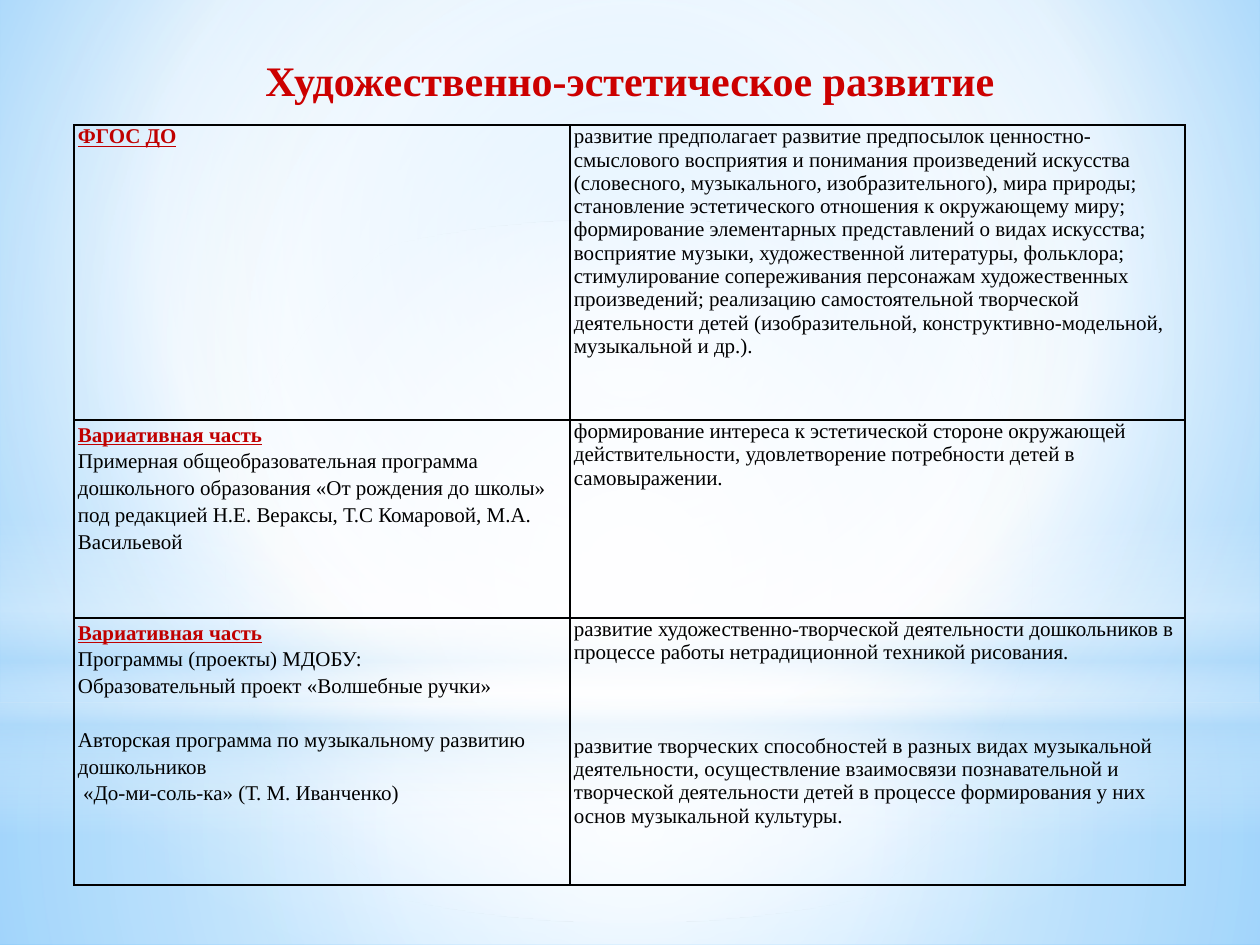
from lxml.etree import SubElement
from pptx import Presentation
from pptx.dml.color import RGBColor
from pptx.enum.shapes import MSO_SHAPE
from pptx.enum.text import MSO_ANCHOR, PP_ALIGN
from pptx.oxml import parse_xml
from pptx.oxml.ns import nsdecls, qn
from pptx.util import Pt

PX = 914400 // 126
FONT = "Times New Roman"
COLORS = {"title": "CC0000", "heading": "C00000", "text": "000000", "border": "000000",
          "white": "FFFFFF", "haze": "B4DCFA", "sky": "9ED5FF", "blue": "5BB9FF"}

TITLE = "Художественно-эстетическое развитие"
TITLE_BOX = (74, 45, 1112, 70)

# Gradient stops: position %, colour, opacity %
BACKGROUND = [(0, "sky", 100), (60, "white", 100), (100, "blue", 100)]
BACKGROUND_FOCUS = (20, 10, 20, 60)
CENTRE = (50, 50, 50, 50)
# Shape, box, stops, focus (None for a vertical linear gradient)
HAZE = [
    (MSO_SHAPE.RECTANGLE, (0, 703, 1260, 242),
     [(0, "white", 91), (37, "white", 76), (100, "haze", 79)], CENTRE),
    (MSO_SHAPE.RECTANGLE, (0, 0, 1260, 703),
     [(0, "white", 89), (48, "white", 62), (100, "haze", 79)], CENTRE),
    (MSO_SHAPE.RECTANGLE, (0, 519, 1260, 315),
     [(0, "white", 0), (29, "white", 30), (45, "haze", 40),
      (55, "white", 26), (65, "haze", 60), (100, "white", 0)], None),
    (MSO_SHAPE.OVAL, (0, 220, 1260, 703),
     [(0, "white", 100), (56, "white", 0)], CENTRE),
]

TABLE_LEFT, TABLE_TOP = 74, 125
COLUMN_WIDTHS = [496, 615]
ROW_HEIGHTS = [295, 198, 267]
CELL_MARGIN = 4
# Each row: heading, left paragraphs, right paragraphs; a paragraph is (text, points before)
ROWS = [
    ("ФГОС ДО", [],
     [("развитие предполагает развитие предпосылок ценностно-смыслового восприятия и понимания "
       "произведений искусства (словесного, музыкального, изобразительного), мира природы; "
       "становление эстетического отношения к окружающему миру; формирование элементарных "
       "представлений о видах искусства; восприятие музыки, художественной литературы, фольклора; "
       "стимулирование сопереживания персонажам художественных произведений; реализацию "
       "самостоятельной творческой деятельности детей (изобразительной, "
       "конструктивно-модельной, музыкальной и др.).", 0)]),
    ("Вариативная часть",
     [("Примерная общеобразовательная программа дошкольного образования «От рождения до школы» "
       "под редакцией Н.Е. Вераксы, Т.С Комаровой, М.А. Васильевой", 0)],
     [("формирование интереса к эстетической стороне окружающей действительности, "
       "удовлетворение потребности детей в самовыражении.", 0)]),
    ("Вариативная часть",
     [("Программы (проекты) МДОБУ:", 0),
      ("Образовательный проект «Волшебные ручки»", 0),
      ("Авторская программа по музыкальному развитию дошкольников", 15.3),
      (" «До-ми-соль-ка» (Т. М. Иванченко)", 0)],
     [("развитие художественно-творческой деятельности дошкольников в процессе работы "
       "нетрадиционной техникой рисования.", 0),
      ("развитие творческих способностей в разных видах музыкальной деятельности, осуществление "
       "взаимосвязи познавательной и творческой деятельности детей в процессе формирования у них "
       "основ музыкальной культуры.", 40)]),
]


def scaled(lengths):
    return [length * PX for length in lengths]


def gradient(stops, focus):
    stop_xml = "".join(
        f'<a:gs pos="{position * 1000}"><a:srgbClr val="{COLORS[color]}">'
        f'<a:alpha val="{opacity * 1000}"/></a:srgbClr></a:gs>'
        for position, color, opacity in stops)
    if focus:
        sides = " ".join(f'{side}="{value * 1000}"' for side, value in zip("ltrb", focus))
        shade = f'<a:path path="circle"><a:fillToRect {sides}/></a:path>'
    else:
        shade = '<a:lin ang="5400000" scaled="0"/>'
    return parse_xml(f'<a:gradFill rotWithShape="1" {nsdecls("a")}>'
                     f'<a:gsLst>{stop_xml}</a:gsLst>{shade}</a:gradFill>')


def style(paragraph, size, color, bold=False, underline=False):
    font = paragraph.font
    font.name, font.size = FONT, Pt(size)
    font.bold, font.underline = bold, underline
    font.color.rgb = RGBColor.from_string(COLORS[color])


def add_borders(cell):
    properties = cell._tc.get_or_add_tcPr()
    for position, side in enumerate(("lnL", "lnR", "lnT", "lnB")):
        properties.insert(position, parse_xml(
            f'<a:{side} w="12700" {nsdecls("a")}><a:solidFill>'
            f'<a:srgbClr val="{COLORS["border"]}"/></a:solidFill></a:{side}>'))


def fill_cell(cell, heading, paragraphs, line_spacing):
    cell.fill.background()
    add_borders(cell)
    cell.margin_left = cell.margin_right = CELL_MARGIN * PX
    cell.margin_top = cell.margin_bottom = 0
    entries = [(heading, 0, True)] if heading else []
    entries += [(text, before, False) for text, before in paragraphs]
    for index, (text, before, is_heading) in enumerate(entries):
        frame = cell.text_frame
        para = frame.add_paragraph() if index else frame.paragraphs[0]
        para.text = text
        para.space_before = Pt(before)
        para.line_spacing = line_spacing
        style(para, 12, "heading" if is_heading else "text", is_heading, is_heading)


deck = Presentation()
deck.slide_width, deck.slide_height = scaled((1260, 945))
slide = deck.slides.add_slide(deck.slide_layouts[5])

slide.background.fill.solid()
background = slide.element.find(".//" + qn("p:bgPr"))
background.replace(background[0], gradient(BACKGROUND, BACKGROUND_FOCUS))

for kind, box, stops, focus in HAZE:
    shape = slide.shapes.add_shape(kind, *scaled(box))
    shape.line.fill.background()
    shape.shadow.inherit = False
    shape.element.spPr.find(qn("a:prstGeom")).addnext(gradient(stops, focus))

title = slide.shapes.title
title.left, title.top, title.width, title.height = scaled(TITLE_BOX)
title.text_frame.text = TITLE
title.text_frame.vertical_anchor = MSO_ANCHOR.MIDDLE
title.text_frame.paragraphs[0].alignment = PP_ALIGN.CENTER
style(title.text_frame.paragraphs[0], 24, "title", bold=True)
slide.shapes.element.append(title.element)  # in front of the haze

table = slide.shapes.add_table(
    len(ROWS), len(COLUMN_WIDTHS),
    *scaled((TABLE_LEFT, TABLE_TOP, sum(COLUMN_WIDTHS), sum(ROW_HEIGHTS)))).table
table.first_row = table.horz_banding = False
for column, width in zip(table.columns, COLUMN_WIDTHS):
    column.width = width * PX
for index, (height, (heading, left, right)) in enumerate(zip(ROW_HEIGHTS, ROWS)):
    table.rows[index].height = height * PX
    fill_cell(table.cell(index, 0), heading, left, 1.15 if left else 1.0)
    fill_cell(table.cell(index, 1), None, right, 1.0)

deck.save("out.pptx")
